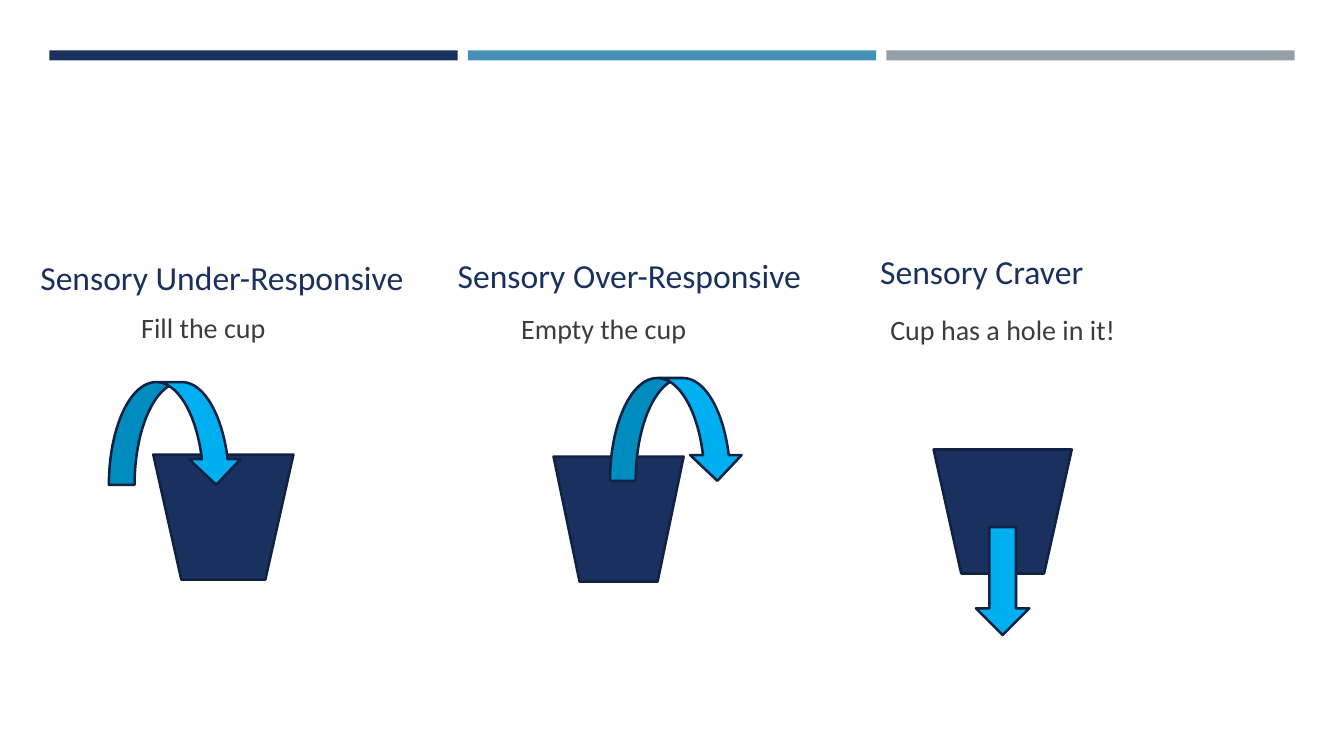
from pptx import Presentation
from pptx.dml.color import RGBColor
from pptx.enum.shapes import MSO_SHAPE
from pptx.enum.text import MSO_ANCHOR
from pptx.util import Inches, Pt

COLORS = {
    "navy": "1A315F",
    "blue": "4590B8",
    "gray": "959FA7",
    "outline": "102144",
    "arrow": "00AFEF",
    "text": "3C3C3C",
}
FONT = "Calibri"


def rgb(name):
    return RGBColor.from_string(COLORS[name])


def write(p, text, size=24, color="navy", indent=0.01, before=None, spacing=None):
    p._p.get_or_add_pPr().set("marL", str(Inches(indent)))
    if before:
        p.space_before = Pt(before)
    if spacing:
        p.line_spacing = Pt(spacing)
    r = p.add_run()
    r.text = text
    r.font.name = FONT
    r.font.size = Pt(size)
    r.font.color.rgb = rgb(color)


class SlideBuilder:
    def __init__(self, slide):
        self.s = slide

    def shape(self, kind, x, y, w, h, fill, outlined=True):
        sp = self.s.shapes.add_shape(kind, Inches(x), Inches(y), Inches(w), Inches(h))
        sp.shadow.inherit = False
        sp.fill.solid()
        sp.fill.fore_color.rgb = rgb(fill)
        if outlined:
            sp.line.color.rgb = rgb("outline")
            sp.line.width = Pt(1.8)
        else:
            sp.line.fill.background()

    def bar(self, x, fill):
        self.shape(MSO_SHAPE.RECTANGLE, x, 0.5, 4.05, 0.1, fill, outlined=False)

    def cup(self, x, y, w, h):
        self.shape(MSO_SHAPE.FLOWCHART_MANUAL_OPERATION, x, y, w, h, "navy")

    def curved_arrow(self, x, y):
        self.shape(MSO_SHAPE.CURVED_DOWN_ARROW, x, y, 1.32, 1.02, "arrow")

    def down_arrow(self, x, y):
        self.shape(MSO_SHAPE.DOWN_ARROW, x, y, 0.53, 1.07, "arrow")

    def text(self, x, y, w, h, *paragraphs):
        tf = self.s.shapes.add_textbox(Inches(x), Inches(y), Inches(w), Inches(h)).text_frame
        tf.word_wrap = True
        tf.vertical_anchor = MSO_ANCHOR.TOP
        tf.margin_left = tf.margin_right = tf.margin_top = tf.margin_bottom = 0
        for i, (content, style) in enumerate(paragraphs):
            p = tf.add_paragraph() if i else tf.paragraphs[0]
            write(p, content, **style)


def main():
    prs = Presentation()
    prs.slide_width, prs.slide_height = Inches(13.33), Inches(7.5)
    b = SlideBuilder(prs.slides.add_slide(prs.slide_layouts[6]))

    for i, fill in enumerate(("navy", "blue", "gray")):
        b.bar(0.49 + 4.15 * i, fill)

    caption = {"size": 20, "color": "text"}
    b.text(0.39, 2.55, 3.65, 0.83,
           ("Sensory Under-Responsive", {}),
           ("Fill the cup", {**caption, "indent": 1.01, "before": 9.7}))
    b.text(4.53, 2.53, 3.5, 0.86,
           ("Sensory Over-Responsive", {}),
           ("Empty the cup", {**caption, "indent": 0.64, "before": 11.7}))
    b.text(8.72, 2.49, 2.13, 0.33, ("Sensory Craver", {"spacing": 28.8}))
    b.text(8.82, 3.1, 2.28, 0.28, ("Cup has a hole in it!", {**caption, "spacing": 24}))

    b.cup(1.52, 4.51, 1.39, 1.24)
    b.cup(5.49, 4.53, 1.29, 1.24)
    b.cup(9.26, 4.46, 1.37, 1.23)
    b.curved_arrow(1.08, 3.79)
    b.curved_arrow(6.05, 3.75)
    b.down_arrow(9.68, 5.23)

    prs.save("out.pptx")


if __name__ == "__main__":
    main()
